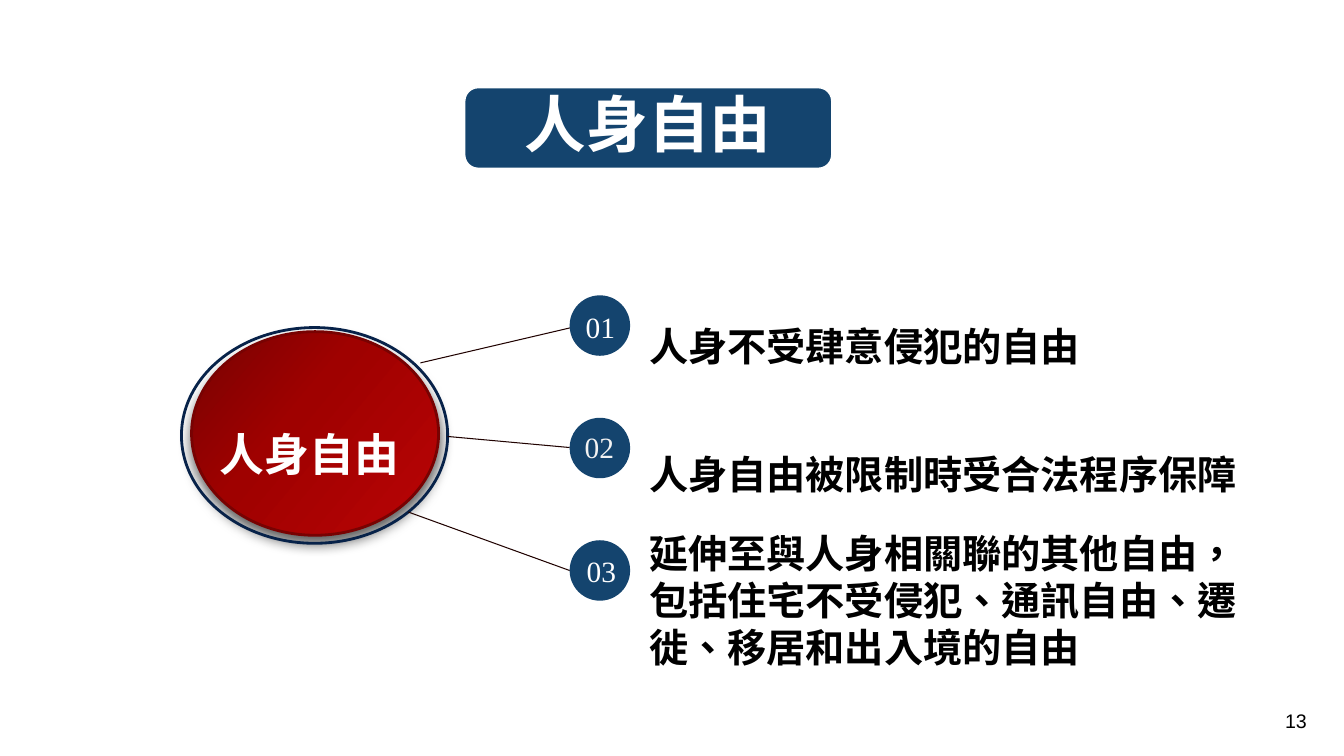
from pptx import Presentation
from pptx.dml.color import RGBColor
from pptx.enum.lang import MSO_LANGUAGE_ID as LANG
from pptx.enum.shapes import MSO_CONNECTOR, MSO_SHAPE
from pptx.enum.text import MSO_ANCHOR, PP_ALIGN
from pptx.oxml import parse_xml
from pptx.oxml.ns import nsdecls, qn
from pptx.util import Inches, Pt

WHITE = RGBColor(0xFF, 0xFF, 0xFF)
PALE = RGBColor(0xF2, 0xF2, 0xF2)
BLACK = RGBColor(0, 0, 0)
BLUE = RGBColor(0x14, 0x44, 0x6E)
NAVY = RGBColor(0x07, 0x22, 0x49)
DARK_RED = RGBColor(0x78, 0x02, 0x02)
MID_RED = RGBColor(0x9F, 0x01, 0x00)
RED = RGBColor(0xB3, 0x03, 0x04)
LINE = RGBColor(0x20, 0x02, 0x00)
CHINESE_FONT = "Roboto"
NUMBER_FONT = "Times New Roman"


def write(tf, text, size, color, font=CHINESE_FONT, spacing=None, align=None):
    tf.text = text
    p = tf.paragraphs[0]
    p.alignment = align
    p.line_spacing = spacing
    r = p.runs[0]
    r.font.size = Pt(size)
    r.font.color.rgb = color
    r.font.name = font
    if font == CHINESE_FONT:
        r.font.bold = True
        r.font.language_id = LANG.TRADITIONAL_CHINESE
        latin = r.font._element.find(qn("a:latin"))
        latin.addnext(parse_xml(f'<a:ea {nsdecls("a")} typeface="{font}"/>'))


def add_text(shapes, box, text, size, color, wrap=True, **style):
    s = shapes.add_textbox(*map(Inches, box))
    s.text_frame.word_wrap = wrap
    write(s.text_frame, text, size, color, **style)
    return s


def add_shape(shapes, kind, box, fill=None, line=None, width=2):
    s = shapes.add_shape(kind, *map(Inches, box))
    s.shadow.inherit = False
    if fill is None:
        s.fill.background()
    else:
        s.fill.solid()
        s.fill.fore_color.rgb = fill
    if line is None:
        s.line.fill.background()
    else:
        s.line.color.rgb = line
        s.line.width = Pt(width)
    return s


def add_title(shapes, text):
    s = add_shape(shapes, MSO_SHAPE.ROUNDED_RECTANGLE, (4.61, 0.87, 3.64, 0.8), BLUE, WHITE, 1)
    tf = s.text_frame
    tf.word_wrap = True
    tf.vertical_anchor = MSO_ANCHOR.MIDDLE
    tf.margin_left = tf.margin_right = Inches(0.2)
    tf.margin_top = tf.margin_bottom = Inches(0.03)
    write(tf, text, 44, WHITE, spacing=0.9, align=PP_ALIGN.CENTER)


def add_glossy_disc(shapes, box):
    s = add_shape(shapes, MSO_SHAPE.OVAL, box, RED, DARK_RED)
    stops = "".join(
        f'<a:gs pos="{pos * 1000}"><a:srgbClr val="{color}"/></a:gs>'
        for pos, color in ((12, RED), (59, MID_RED), (100, DARK_RED))
    )
    gradient = parse_xml(
        f'<a:gradFill {nsdecls("a")} rotWithShape="1"><a:gsLst>{stops}</a:gsLst>'
        f'<a:lin ang="{220 * 60000}" scaled="0"/></a:gradFill>'
    )
    shadow = parse_xml(
        f'<a:outerShdw {nsdecls("a")} blurRad="{Pt(10)}" dist="{Pt(5)}" dir="{90 * 60000}" '
        'algn="t" rotWithShape="0"><a:srgbClr val="000000"><a:alpha val="63000"/>'
        '</a:srgbClr></a:outerShdw>'
    )
    spPr = s._element.spPr
    spPr.replace(spPr.find(qn("a:solidFill")), gradient)
    spPr.find(qn("a:effectLst")).append(shadow)


def add_line(shapes, start, end):
    s = shapes.add_connector(MSO_CONNECTOR.STRAIGHT, *map(Inches, start + end))
    s.line.color.rgb = LINE
    s.line.width = Pt(0.75)
    s._element.spPr.append(parse_xml(f'<a:effectLst {nsdecls("a")}/>'))


def add_node(shapes, top, number, label_box, color, wrap):
    group = shapes.add_group_shape().shapes
    add_shape(group, MSO_SHAPE.OVAL, (5.65, top, 0.6, 0.6), BLUE)
    add_text(group, label_box, number, 21, color, wrap, font=NUMBER_FONT)


def main():
    prs = Presentation()
    prs.slide_width, prs.slide_height = Inches(13.33), Inches(7.5)
    shapes = prs.slides.add_slide(prs.slide_layouts[6]).shapes

    add_title(shapes, "人身自由")
    add_glossy_disc(shapes, (1.9, 3.29, 2.45, 2.02))
    add_shape(shapes, MSO_SHAPE.OVAL, (1.8, 3.25, 2.64, 2.14), line=NAVY)

    for start, end in (
        ((4.17, 3.6), (5.71, 3.24)),
        ((4.44, 4.33), (5.65, 4.44)),
        ((4.05, 5.08), (5.65, 5.66)),
    ):
        add_line(shapes, start, end)

    nodes = (
        ("01", (5.71, 3.02, 0.57, 0.45), WHITE, True),
        ("02", (5.7, 4.21, 0.5, 0.45), PALE, False),
        ("03", (5.72, 5.44, 0.5, 0.45), WHITE, False),
    )
    for i, node in enumerate(nodes):
        add_node(shapes, 2.93 + 1.215 * i, *node)

    add_text(shapes, (2.08, 3.38, 2.33, 1.45), "人身自由", 32, WHITE, spacing=2.5)
    for box, text, spacing in (
        ((6.34, 1.98, 5.72, 1.75), "人身不受肆意侵犯的自由", 3.5),
        ((6.34, 3.25, 6.18, 1.75), "人身自由被限制時受合法程序保障", 3.5),
        ((6.34, 5.2, 6.18, 1.51),
         "延伸至與人身相關聯的其他自由，包括住宅不受侵犯、通訊自由、遷徙、移居和出入境的自由", None),
    ):
        add_text(shapes, box, text, 28, BLACK, spacing=spacing)
    add_text(shapes, (12.58, 6.98, 0.48, 0.4), "13", 14, BLACK, font="Arial", align=PP_ALIGN.RIGHT)

    prs.save("out.pptx")


if __name__ == "__main__":
    main()
